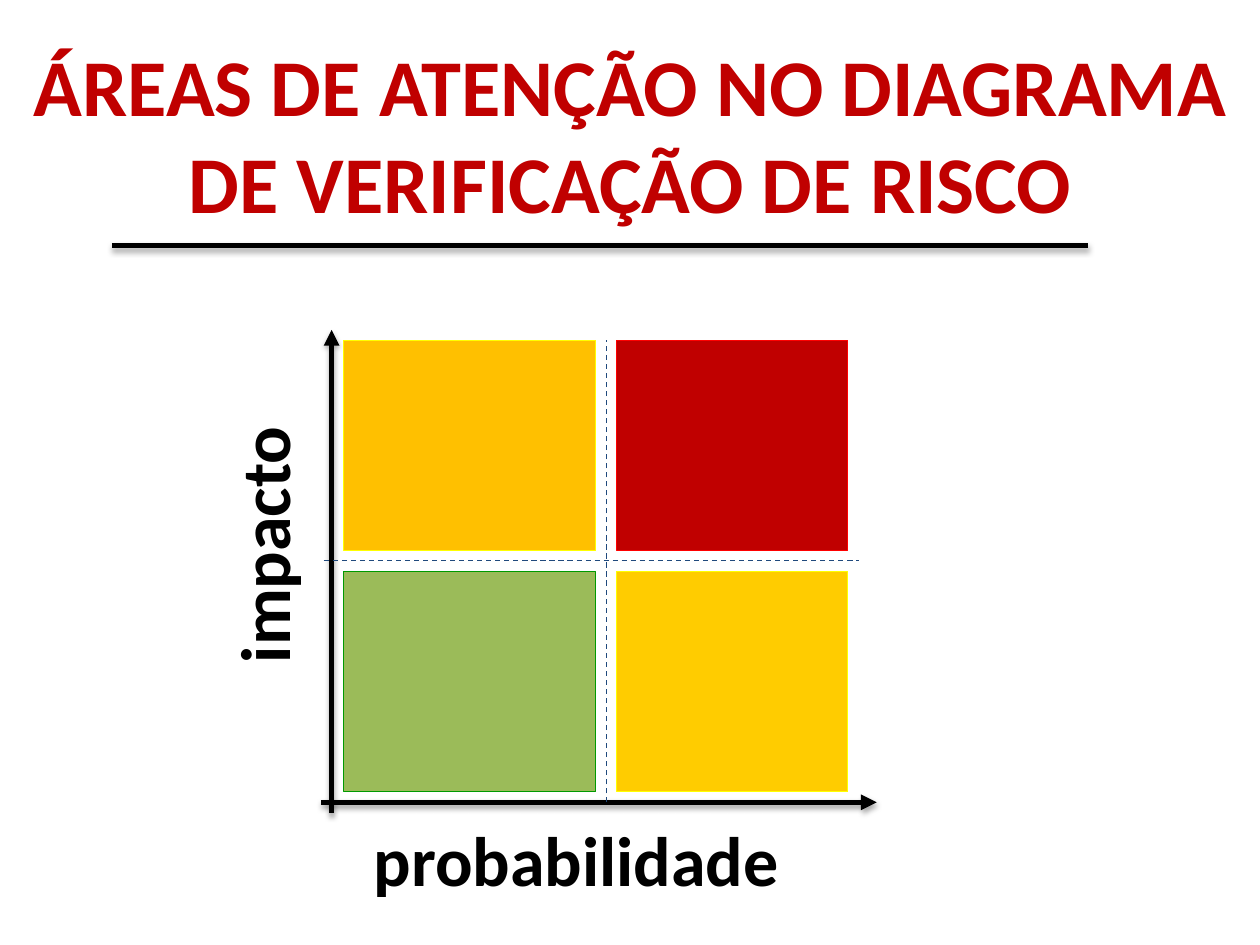
from lxml import etree
from pptx import Presentation
from pptx.dml.color import RGBColor
from pptx.enum.dml import MSO_LINE
from pptx.enum.shapes import MSO_CONNECTOR, MSO_SHAPE
from pptx.enum.text import MSO_ANCHOR, MSO_AUTO_SIZE, PP_ALIGN
from pptx.oxml.ns import qn
from pptx.util import Pt

STRAIGHT = MSO_CONNECTOR.STRAIGHT
RECT = MSO_SHAPE.RECTANGLE
DASH = MSO_LINE.DASH
MIDDLE = MSO_ANCHOR.MIDDLE
NO_FIT = MSO_AUTO_SIZE.NONE
CENTER, LEFT = PP_ALIGN.CENTER, PP_ALIGN.LEFT

BLACK = RGBColor(0x00, 0x00, 0x00)
NAVY = RGBColor(0x1F, 0x49, 0x7D)
CRIMSON = RGBColor(0xC0, 0x00, 0x00)
RED = RGBColor(0xFF, 0x00, 0x00)
AMBER = RGBColor(0xFF, 0xC0, 0x00)
GOLD = RGBColor(0xFF, 0xCC, 0x00)
YELLOW = RGBColor(0xFF, 0xFF, 0x00)
OLIVE = RGBColor(0x9B, 0xBB, 0x59)
GREEN = RGBColor(0x00, 0x99, 0x00)

GAP = 12
COLS = (144, 132)
ROWS = (120, 126)
CELLS = (((AMBER, YELLOW), (CRIMSON, RED)),
         ((OLIVE, GREEN), (GOLD, YELLOW)))


def write(shape, text, size, color, align, spacing=1.0):
    frame = shape.text_frame
    for name, value in {"word_wrap": True, "auto_size": NO_FIT,
                        "vertical_anchor": MIDDLE, "text": text}.items():
        setattr(frame, name, value)
    para = frame.paragraphs[0]
    for name, value in {"alignment": align, "line_spacing": spacing,
                        "space_before": Pt(0)}.items():
        setattr(para, name, value)
    font = para.runs[0].font
    for name, value in {"name": "Calibri", "size": Pt(size),
                        "bold": True}.items():
        setattr(font, name, value)
    font.color.rgb = color


def add_line(slide, start, end, color, width, dash=None, arrow=False,
             shadow=False):
    ends = [Pt(v) for v in (*start, *end)]
    line = slide.shapes.add_connector(STRAIGHT, *ends)
    line.line.color.rgb = color
    line.line.width = Pt(width)
    if dash:
        line.line.dash_style = dash
    props = line._element.spPr
    if arrow:
        etree.SubElement(props.find(qn("a:ln")), qn("a:tailEnd"),
                         type="triangle")
    effects = etree.SubElement(props, qn("a:effectLst"))
    if shadow:
        outer = etree.SubElement(effects, qn("a:outerShdw"),
                                 blurRad=str(Pt(3.1)), dist=str(Pt(1.8)),
                                 dir="5400000", rotWithShape="0")
        shade = etree.SubElement(outer, qn("a:srgbClr"), val=str(BLACK))
        etree.SubElement(shade, qn("a:alpha"), val="35000")


def add_label(slide, text, box, turn=0):
    label = slide.shapes.add_textbox(*map(Pt, box))
    label.rotation = turn
    write(label, text, 40, BLACK, LEFT, 0.7)


def add_title(slide, left, top, width, height):
    title = slide.shapes.title
    for name, value in {"left": left, "top": top, "width": width,
                        "height": height}.items():
        setattr(title, name, Pt(value))
    write(title, "ÁREAS DE ATENÇÃO NO DIAGRAMA DE VERIFICAÇÃO DE RISCO",
          46, CRIMSON, CENTER)
    # Rule under the title
    rule = top + height + 5
    add_line(slide, (left + 64, rule), (left + 622, rule), BLACK, 3,
             shadow=True)


def add_matrix(slide, left, top):
    right = left + sum(COLS) + GAP
    base = top + sum(ROWS) + GAP

    # Axes
    axis = {"color": BLACK, "width": 3, "arrow": True, "shadow": True}
    add_line(slide, (left - 7, base + 12), (left - 7, top - 6), **axis)
    add_line(slide, (left - 13, base + 6), (right + 16.5, base + 6), **axis)

    # Axis names
    add_label(slide, "probabilidade", (left + 10, base + 23.5, 282, 41))
    add_label(slide, "impacto", (left - 124.5, top + 81.5, 168, 52), 270)

    # Dividers in the middle of the gaps
    split = {"color": NAVY, "width": 0.75, "dash": DASH}
    mid_x = left + COLS[0] + GAP / 2
    mid_y = top + ROWS[0] + GAP / 2
    add_line(slide, (mid_x, base + 6), (mid_x, top), **split)
    add_line(slide, (left - 11.5, mid_y), (right + 6.5, mid_y), **split)

    # Quadrants
    y = top
    for height, row in zip(ROWS, CELLS):
        x = left
        for width, (fill, edge) in zip(COLS, row):
            cell = slide.shapes.add_shape(RECT, Pt(x), Pt(y), Pt(width),
                                          Pt(height))
            cell.shadow.inherit = False
            cell.fill.solid()
            cell.fill.fore_color.rgb = fill
            cell.line.color.rgb = edge
            cell.line.width = Pt(0.75)
            x += width + GAP
        y += height + GAP


def main():
    deck = Presentation()
    deck.slide_width, deck.slide_height = Pt(720), Pt(540)
    slide = deck.slides.add_slide(deck.slide_layouts[5])
    add_title(slide, 0, 16.5, 720, 119)
    add_matrix(slide, 196.5, 194.5)
    deck.save("out.pptx")


if __name__ == "__main__":
    main()
